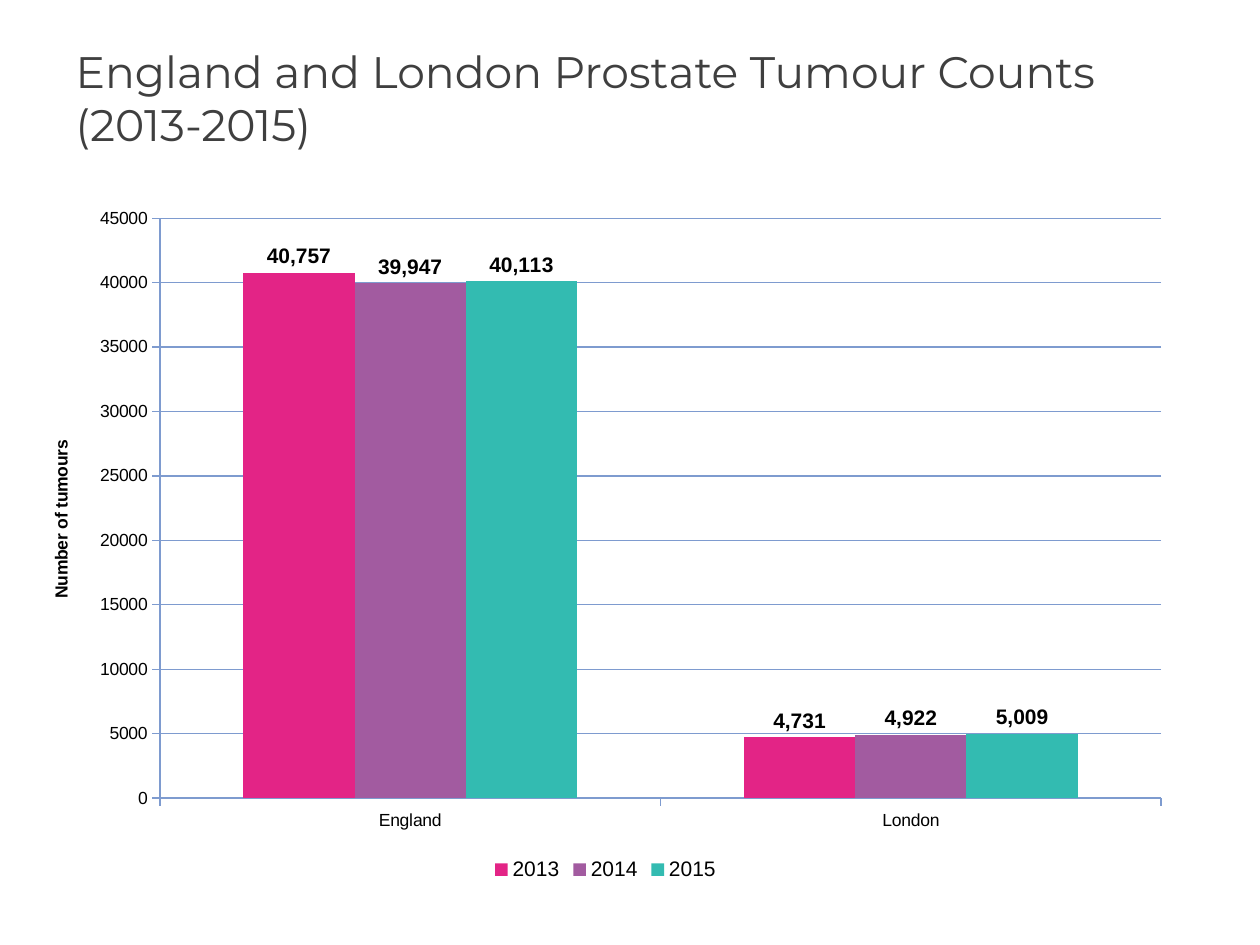
from lxml import etree
from pptx import Presentation
from pptx.chart.data import CategoryChartData
from pptx.dml.color import RGBColor
from pptx.enum.chart import XL_CHART_TYPE, XL_LABEL_POSITION, XL_LEGEND_POSITION, XL_TICK_MARK
from pptx.enum.text import MSO_ANCHOR, PP_ALIGN
from pptx.oxml.ns import qn
from pptx.util import Cm, Pt

COLUMN = XL_CHART_TYPE.COLUMN_CLUSTERED
ABOVE = XL_LABEL_POSITION.OUTSIDE_END
BOTTOM = XL_LEGEND_POSITION.BOTTOM
OUT, NONE = XL_TICK_MARK.OUTSIDE, XL_TICK_MARK.NONE
TOP, LEFT = MSO_ANCHOR.TOP, PP_ALIGN.LEFT

BLACK = RGBColor(0x00, 0x00, 0x00)
GREY = RGBColor(0x3F, 0x3F, 0x3F)
BLUE = RGBColor(0x7E, 0x9B, 0xCF)
PINK = RGBColor(0xE3, 0x24, 0x86)
PURPLE = RGBColor(0xA2, 0x5B, 0xA0)
TEAL = RGBColor(0x33, 0xBB, 0xB1)

YEARS = [
    ("2013", (40757, 4731), PINK),
    ("2014", (39947, 4922), PURPLE),
    ("2015", (40113, 5009), TEAL),
]


def style(font, size, color=BLACK, bold=False, name="Arial"):
    font.name = name
    font.size = Pt(size)
    font.bold = bold
    font.color.rgb = color


deck = Presentation()
deck.slide_width, deck.slide_height = Cm(25.4), Cm(19.05)
slide = deck.slides.add_slide(deck.slide_layouts[5])

title = slide.shapes.title
title.left, title.top = Cm(1.27), Cm(0.76)
title.width, title.height = Cm(22.86), Cm(3.18)
frame = title.text_frame
frame.text = "England and London Prostate Tumour Counts \v(2013-2015)"
frame.word_wrap = True
frame.vertical_anchor = TOP
head = frame.paragraphs[0]
head.alignment = LEFT
for run in head.runs:
    style(run.font, 25.2, GREY, name="Montserrat")

data = CategoryChartData()
data.categories = ["England", "London"]
for year, counts, color in YEARS:
    data.add_series(year, counts)
chart = slide.shapes.add_chart(
    COLUMN, Cm(0.51), Cm(3.94), Cm(23.39), Cm(13.92), data
).chart
style(chart.font, 10)
chart.has_title = False
chart.has_legend = True
chart.legend.position = BOTTOM
chart.legend.include_in_layout = False
style(chart.legend.font, 12)

plot = chart.plots[0]
plot.gap_width = 150
plot.overlap = 0
plot.vary_by_categories = False
for series, (year, counts, color) in zip(plot.series, YEARS):
    series.format.fill.solid()
    series.format.fill.fore_color.rgb = color
    labels = series.data_labels
    labels.show_value = True
    labels.number_format = "#,##0"
    labels.number_format_is_linked = False
    labels.position = ABOVE
    style(labels.font, 12, bold=True)

for axis in (chart.category_axis, chart.value_axis):
    axis.major_tick_mark = OUT
    axis.minor_tick_mark = NONE
    axis.format.line.color.rgb = BLUE
    axis.format.line.width = Pt(0.75)
    style(axis.tick_labels.font, 10)

scale = chart.value_axis
scale.minimum_scale, scale.maximum_scale = 0, 45000
scale.major_unit = 5000
scale.tick_labels.number_format = "0"
scale.tick_labels.number_format_is_linked = False
scale.has_major_gridlines = True
scale.major_gridlines.format.line.color.rgb = BLUE
scale.major_gridlines.format.line.width = Pt(0.75)
label = scale.axis_title.text_frame
label.text = "Number of tumours"
style(label.paragraphs[0].runs[0].font, 10, bold=True)

area = chart.element.find(".//" + qn("c:plotArea"))
for old in area.findall(qn("c:layout")):
    area.remove(old)
layout = etree.Element(qn("c:layout"))
area.insert(0, layout)
manual = etree.SubElement(layout, qn("c:manualLayout"))
for tag, val in (
    ("layoutTarget", "inner"), ("xMode", "edge"), ("yMode", "edge"),
    ("x", "0.116"), ("y", "0.033"), ("w", "0.863"), ("h", "0.84"),
):
    etree.SubElement(manual, qn("c:" + tag)).set("val", val)

deck.save("out.pptx")
